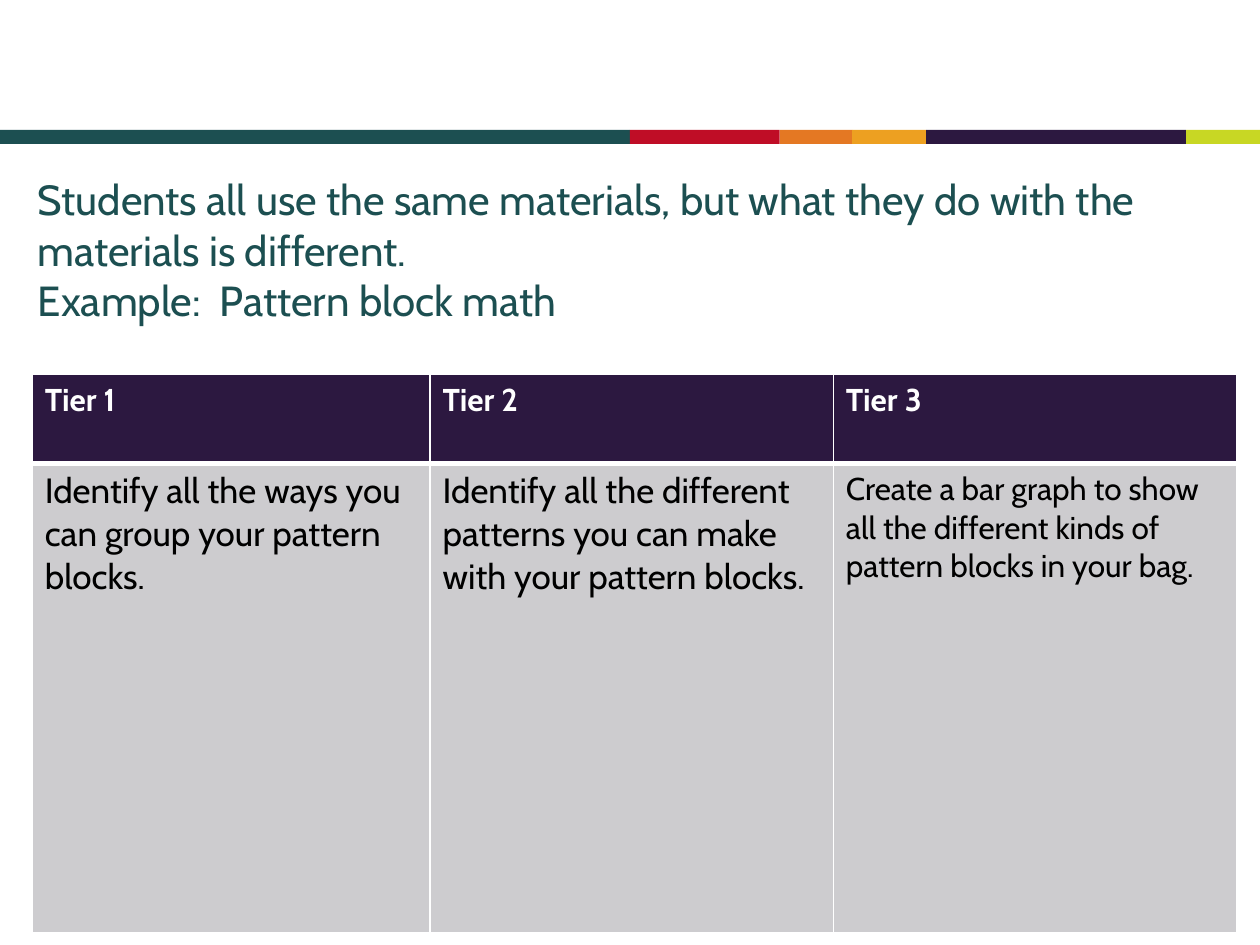
from lxml.etree import SubElement
from pptx import Presentation
from pptx.dml.color import RGBColor
from pptx.enum.text import MSO_ANCHOR, MSO_AUTO_SIZE, PP_ALIGN
from pptx.enum.shapes import MSO_SHAPE
from pptx.oxml.ns import qn
from pptx.util import Cm, Pt

TEAL, PURPLE, GREY, WHITE, BLACK = "1C4F51", "2C1840", "CDCCCF", "FFFFFF", "000000"
BAND = [(12.7, TEAL), (3.02, "BF0D26"), (1.46, "E47823"),
        (1.49, "EDA021"), (5.24, PURPLE), (1.49, "C8D724")]
TIERS = [
    ("Tier 1", "Identify all the ways you can group your pattern blocks.", 20),
    ("Tier 2", "Identify all the different patterns you can make with your pattern blocks.", 20),
    ("Tier 3", "Create a bar graph to show all the different kinds of pattern blocks in your bag.", 18),
]


def rgb(value):
    return RGBColor.from_string(value)


def format_font(font, color, **values):
    for name, value in {"name": "Cabin", **values}.items():
        setattr(font, name, value)
    font.color.rgb = rgb(color)


def add_band(s, x, y, h):
    for w, color in BAND:
        sp = s.shapes.add_shape(MSO_SHAPE.RECTANGLE, Cm(x), Cm(y), Cm(w), Cm(h))
        sp.shadow.inherit = False
        sp.fill.solid()
        sp.fill.fore_color.rgb = rgb(color)
        sp.line.fill.background()
        x += w


def add_title(s, x, y, w, h):
    title = s.shapes.title
    title.left, title.top, title.width, title.height = Cm(x), Cm(y), Cm(w), Cm(h)
    tf = title.text_frame
    # A vertical tab makes a line break inside the paragraph
    tf.text = ("Students all use the same materials, but what they do with the "
               "materials is different.\vExample:  Pattern block math")
    for name, value in {"word_wrap": True, "auto_size": MSO_AUTO_SIZE.NONE,
                        "vertical_anchor": MSO_ANCHOR.BOTTOM}.items():
        setattr(tf, name, value)
    p = tf.paragraphs[0]
    p.alignment = PP_ALIGN.LEFT
    for r in p.runs:
        format_font(r.font, TEAL, size=Pt(24))


def set_borders(cell, **widths):
    tc_pr = cell._tc.get_or_add_tcPr()
    for side in ("L", "R", "T", "B"):
        ln = SubElement(tc_pr, qn(f"a:ln{side}"), w=str(Pt(widths.get(side, 1))))
        SubElement(SubElement(ln, qn("a:solidFill")), qn("a:srgbClr"), val=WHITE)


def fill_cell(cell, text, fill, color, size, bold, **borders):
    set_borders(cell, **borders)
    cell.fill.solid()
    cell.fill.fore_color.rgb = rgb(fill)
    cell.text = text
    format_font(cell.text_frame.paragraphs[0].runs[0].font, color, size=Pt(size), bold=bold)


def add_tiers(s, x, y, widths, heights):
    table = s.shapes.add_table(2, len(TIERS), Cm(x), Cm(y),
                               Cm(sum(widths)), Cm(sum(heights))).table
    table.horz_banding = False
    for column, w in zip(table.columns, widths):
        column.width = Cm(w)
    for row, h in zip(table.rows, heights):
        row.height = Cm(h)
    for i, (tier, task, size) in enumerate(TIERS):
        fill_cell(table.cell(0, i), tier, PURPLE, WHITE, 18, True, B=3)
        fill_cell(table.cell(1, i), task, GREY, BLACK, size, False, T=3)


def main():
    prs = Presentation()
    prs.slide_width, prs.slide_height = Cm(25.4), Cm(19.05)
    s = prs.slides.add_slide(prs.slide_layouts[5])
    add_band(s, 0, 2.62, 0.28)
    add_title(s, 0.51, 3.35, 24.64, 3.33)
    add_tiers(s, 0.65, 7.55, (8.02, 8.13, 8.13), (1.8, 9.45))
    prs.save("out.pptx")


if __name__ == "__main__":
    main()
